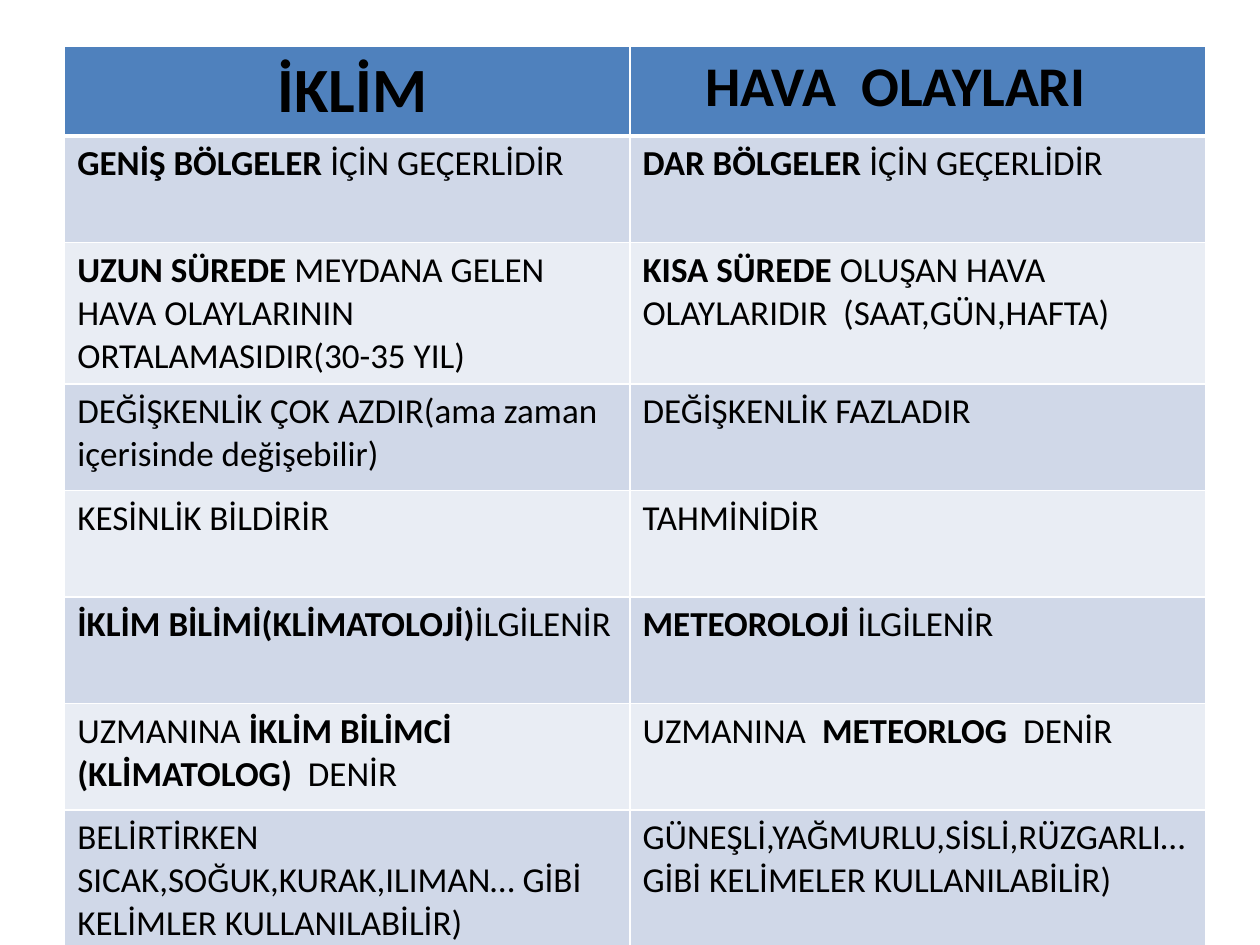
from lxml.etree import SubElement
from pptx import Presentation
from pptx.dml.color import RGBColor
from pptx.oxml.ns import qn
from pptx.util import Pt

COLORS = {
    "header": "4F81BD",
    "odd_row": "D0D8E8",
    "even_row": "E9EDF4",
    "border": "FFFFFF",
    "text": "000000",
}
FONT = "Calibri"
BODY_SIZE = 20

# Headings: text, size, left indent
HEADINGS = [("İKLİM", 36, 114.5), ("HAVA  OLAYLARI", 32, 36)]

# Each row compares climate with weather; asterisks enclose bold words
COMPARISONS = [
    ("*GENİŞ BÖLGELER *İÇİN GEÇERLİDİR", "*DAR BÖLGELER *İÇİN GEÇERLİDİR"),
    ("*UZUN SÜREDE *MEYDANA GELEN HAVA OLAYLARININ ORTALAMASIDIR(30-35 YIL)",
     "*KISA SÜREDE *OLUŞAN HAVA OLAYLARIDIR  (SAAT,GÜN,HAFTA)"),
    ("DEĞİŞKENLİK ÇOK AZDIR(ama zaman içerisinde değişebilir)",
     "DEĞİŞKENLİK FAZLADIR"),
    ("KESİNLİK BİLDİRİR", "TAHMİNİDİR"),
    ("*İKLİM BİLİMİ(KLİMATOLOJİ)*İLGİLENİR", "*METEOROLOJİ* İLGİLENİR"),
    ("UZMANINA *İKLİM BİLİMCİ (KLİMATOLOG)  *DENİR",
     "UZMANINA  *METEORLOG  *DENİR"),
    ("BELİRTİRKEN  SICAK,SOĞUK,KURAK,ILIMAN… GİBİ KELİMLER KULLANILABİLİR)",
     "GÜNEŞLİ,YAĞMURLU,SİSLİ,RÜZGARLI… GİBİ KELİMELER KULLANILABİLİR)"),
]


def style_cell(cell, fill, top=1, bottom=1):
    """Draw the four borders, then the fill."""
    properties = cell._tc.get_or_add_tcPr()
    for side, width in (("L", 1), ("R", 1), ("T", top), ("B", bottom)):
        line = SubElement(properties, qn(f"a:ln{side}"), w=str(Pt(width)))
        solid = SubElement(line, qn("a:solidFill"))
        SubElement(solid, qn("a:srgbClr"), val=COLORS["border"])
    cell.fill.solid()
    cell.fill.fore_color.rgb = RGBColor.from_string(COLORS[fill])


def write_text(cell, marked_text, size):
    """Add one run for each plain or bold stretch."""
    paragraph = cell.text_frame.paragraphs[0]
    for index, words in enumerate(marked_text.split("*")):
        if words:
            run = paragraph.add_run()
            run.text = words
            run.font.name = FONT
            run.font.size = Pt(size)
            run.font.bold = index % 2 == 1
            run.font.color.rgb = RGBColor.from_string(COLORS["text"])
    return paragraph


def add_comparison_table(slide, left, top, column_widths, header_height, row_height):
    row_count = len(COMPARISONS) + 1
    height = header_height + row_height * len(COMPARISONS)
    table = slide.shapes.add_table(
        row_count, len(column_widths), Pt(left), Pt(top),
        Pt(sum(column_widths)), Pt(height)).table
    for column, width in zip(table.columns, column_widths):
        column.width = Pt(width)
    for index, row in enumerate(table.rows):
        row.height = Pt(row_height if index else header_height)

    # Header row
    for column, (heading, size, indent) in enumerate(HEADINGS):
        cell = table.cell(0, column)
        style_cell(cell, "header", bottom=3)
        paragraph = write_text(cell, f"*{heading}*", size)
        paragraph._p.get_or_add_pPr().set("marL", str(Pt(indent)))

    # Banded comparison rows
    for row, statements in enumerate(COMPARISONS, start=1):
        for column, statement in enumerate(statements):
            cell = table.cell(row, column)
            style_cell(cell, "odd_row" if row % 2 else "even_row",
                       top=3 if row == 1 else 1)
            write_text(cell, statement, BODY_SIZE)


def main():
    deck = Presentation()
    deck.slide_width, deck.slide_height = Pt(720), Pt(540)
    slide = deck.slides.add_slide(deck.slide_layouts[6])
    add_comparison_table(slide, left=37, top=26.5, column_widths=(323, 329),
                         header_height=45.4, row_height=60.9)
    deck.save("out.pptx")


if __name__ == "__main__":
    main()
